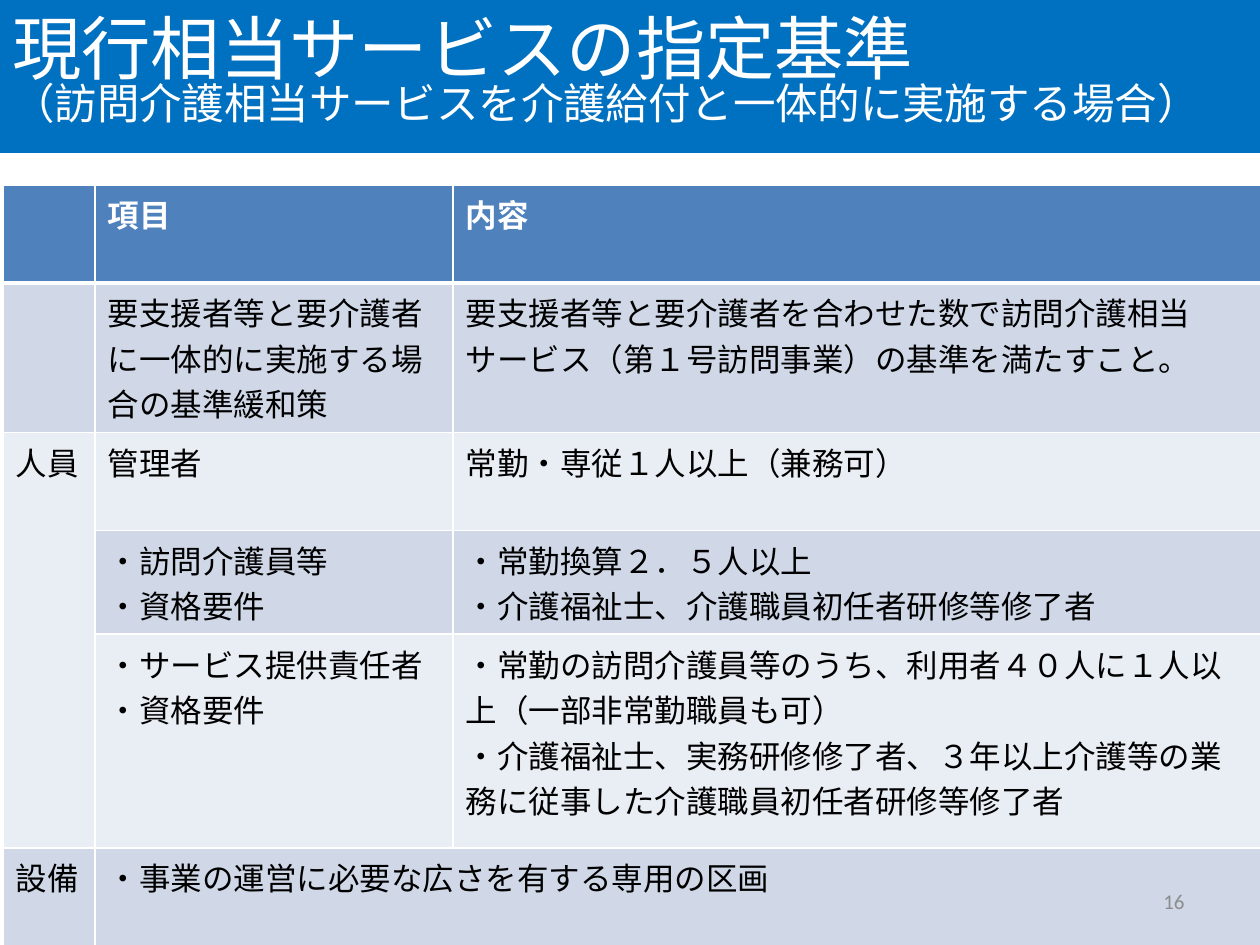
import pptx
import pptx.util
import pptx.dml.color
import pptx.enum.shapes
import pptx.enum.text
import pptx.oxml.ns
from dataclasses import dataclass
from lxml import etree

SCALE = 914400 / 126


@dataclass(frozen=True)
class Theme:
    font: str = "Calibri"
    white: str = "FFFFFF"
    black: str = "000000"
    blue: str = "0070C0"
    head: str = "4F81BD"
    dark: str = "D0D8E8"
    light: str = "E9EDF4"
    gray: str = "8C8C8C"
    title: float = 39.6
    sub: float = 24.3
    body: int = 18
    small: int = 12
    thin: int = 1
    thick: int = 3


THEME = Theme()
COLS = [92, 358, 809]
ROWS = [98, 130, 98, 103, 214, 98]
CELLS = [
    ["", "項目", "内容"],
    ["", "要支援者等と要介護者に一体的に実施する場合の基準緩和策",
     "要支援者等と要介護者を合わせた数で訪問介護相当サービス（第１号訪問事業）の基準を満たすこと。"],
    ["人員", "管理者", "常勤・専従１人以上（兼務可）"],
    ["", "・訪問介護員等\n・資格要件",
     "・常勤換算２．５人以上\n・介護福祉士、介護職員初任者研修等修了者"],
    ["", "・サービス提供責任者\n・資格要件",
     "・常勤の訪問介護員等のうち、利用者４０人に１人以上（一部非常勤職員も可）\n"
     "・介護福祉士、実務研修修了者、３年以上介護等の業務に従事した介護職員初任者研修等修了者"],
    ["設備", "・事業の運営に必要な広さを有する専用の区画", ""],
]
MERGES = [(2, 0, 4, 0), (5, 1, 5, 2)]


def px(size):
    return pptx.util.Emu(round(size * SCALE))


def rgb(color):
    return pptx.dml.color.RGBColor.from_string(color)


def style(font, size, color, bold=False):
    font.name = THEME.font
    font.size = pptx.util.Pt(size)
    font.bold = bold
    font.color.rgb = rgb(color)


def paint(thing, color):
    thing.fill.solid()
    thing.fill.fore_color.rgb = rgb(color)


def add_title(slide):
    band = slide.shapes.add_shape(
        pptx.enum.shapes.MSO_SHAPE.RECTANGLE, px(0), px(-4), px(1260), px(157))
    band.shadow.inherit = False
    paint(band, THEME.blue)
    band.line.fill.background()
    frame = band.text_frame
    frame.word_wrap = True
    frame.vertical_anchor = pptx.enum.text.MSO_ANCHOR.MIDDLE
    para = frame.paragraphs[0]
    para.text = "現行相当サービスの指定基準\v（訪問介護相当サービスを介護給付と一体的に実施する場合）"
    para.alignment = pptx.enum.text.PP_ALIGN.LEFT
    para.line_spacing = 0.8
    for run, size in zip(para.runs, (THEME.title, THEME.sub)):
        style(run.font, size, THEME.white)


def add_edge(cell, side, width):
    qn = pptx.oxml.ns.qn
    props = cell._tc.get_or_add_tcPr()
    line = etree.SubElement(props, qn(f"a:ln{side}"), w=str(pptx.util.Pt(width)))
    fill = etree.SubElement(line, qn("a:solidFill"))
    etree.SubElement(fill, qn("a:srgbClr"), val=THEME.white)


def fill_cell(cell, row, text, back):
    thick = {(0, "B"), (1, "T")}
    for side in "LRTB":
        add_edge(cell, side, THEME.thick if (row, side) in thick else THEME.thin)
    paint(cell, back)
    cell.text_frame.text = text
    top = row == 0
    for para in cell.text_frame.paragraphs:
        style(para.font, THEME.body, THEME.black)
        for run in para.runs:
            style(run.font, THEME.body, THEME.white if top else THEME.black, top)


def add_grid(slide):
    table = slide.shapes.add_table(
        len(ROWS), len(COLS), px(3), px(185), px(sum(COLS)), px(sum(ROWS))).table
    for col, width in zip(table.columns, COLS):
        col.width = px(width)
    for row, height in zip(table.rows, ROWS):
        row.height = px(height)
    for r, texts in enumerate(CELLS):
        band = THEME.dark if r % 2 else THEME.light
        for c, text in enumerate(texts):
            back = THEME.head if r == 0 else THEME.light if c == 0 and 2 <= r <= 4 else band
            fill_cell(table.cell(r, c), r, text, back)
    for top, left, low, right in MERGES:
        table.cell(top, left).merge(table.cell(low, right))


def add_number(slide):
    box = slide.shapes.add_textbox(px(903), px(876), px(294), px(50))
    frame = box.text_frame
    frame.word_wrap = True
    frame.vertical_anchor = pptx.enum.text.MSO_ANCHOR.MIDDLE
    frame.text = "16"
    para = frame.paragraphs[0]
    para.alignment = pptx.enum.text.PP_ALIGN.RIGHT
    style(para.runs[0].font, THEME.small, THEME.gray)


def main():
    deck = pptx.Presentation()
    deck.slide_width, deck.slide_height = px(1260), px(945)
    slide = deck.slides.add_slide(deck.slide_layouts[6])
    add_title(slide)
    add_grid(slide)
    add_number(slide)
    deck.save("out.pptx")


if __name__ == "__main__":
    main()
